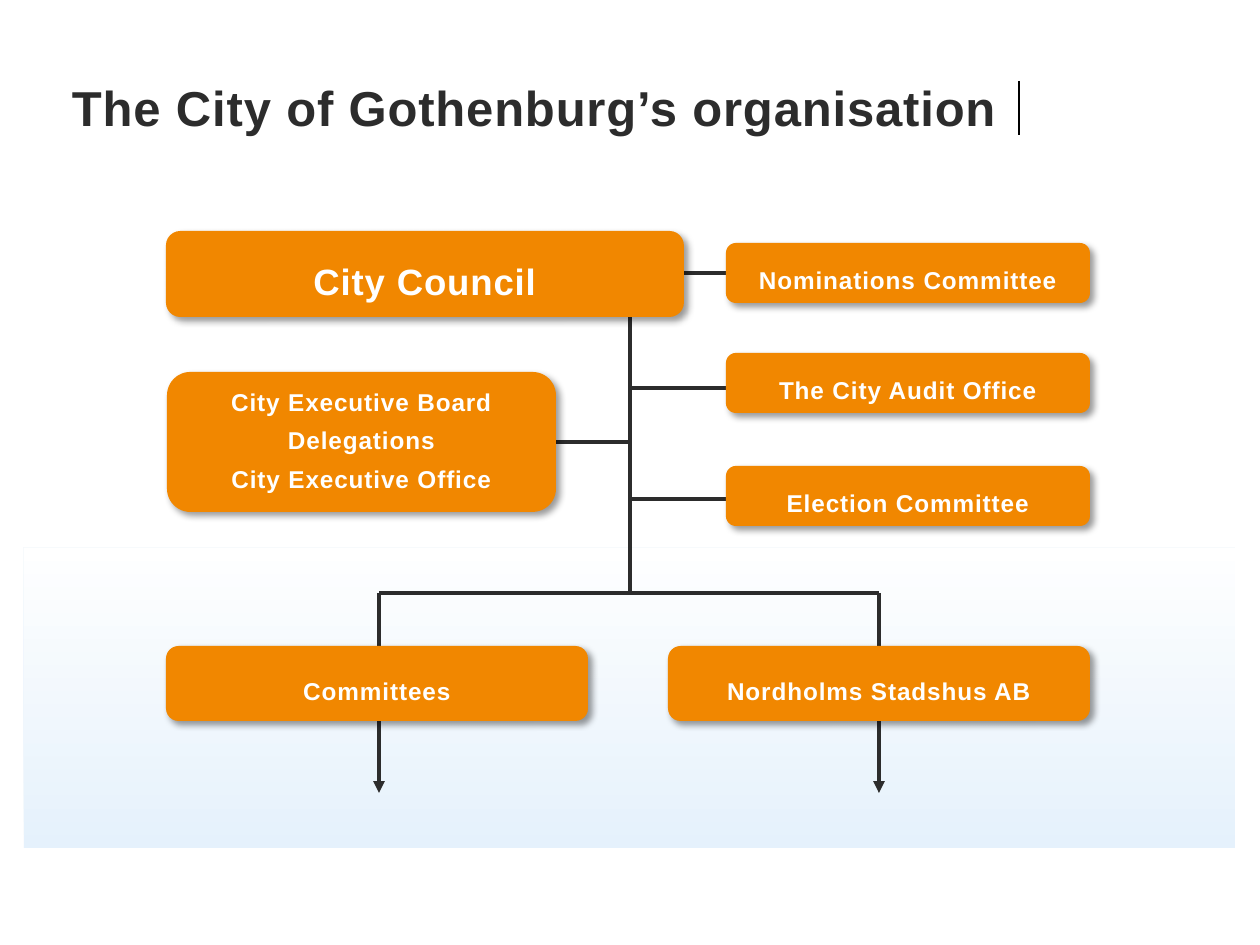
from lxml import etree
from pptx import Presentation
from pptx.dml.color import RGBColor
from pptx.enum.shapes import MSO_CONNECTOR, MSO_SHAPE
from pptx.enum.text import MSO_ANCHOR, PP_ALIGN
from pptx.oxml import parse_xml
from pptx.oxml.ns import nsdecls, qn
from pptx.util import Emu, Pt

STRAIGHT = MSO_CONNECTOR.STRAIGHT
RECT, ROUNDED = MSO_SHAPE.RECTANGLE, MSO_SHAPE.ROUNDED_RECTANGLE
MIDDLE, LEFT, CENTER = MSO_ANCHOR.MIDDLE, PP_ALIGN.LEFT, PP_ALIGN.CENTER
BLACK = RGBColor(0x00, 0x00, 0x00)
CHARCOAL = RGBColor(0x2C, 0x2C, 0x2C)
ORANGE = RGBColor(0xF1, 0x87, 0x00)
PALE_BLUE = RGBColor(0xD1, 0xE7, 0xFA)
WHITE = RGBColor(0xFF, 0xFF, 0xFF)
SCALE = 914400 / 126
SHADOW = (
    f'<a:effectLst {nsdecls("a")}>'
    '<a:outerShdw blurRad="50800" dist="38100" dir="2700000" algn="tl" rotWithShape="0">'
    '<a:srgbClr val="000000"><a:alpha val="40000"/></a:srgbClr>'
    '</a:outerShdw></a:effectLst>'
)


def px(n):
    return Emu(round(n * SCALE))


def add_line(s, x1, y1, x2, y2, color=CHARCOAL, width=2.25, arrow=False):
    c = s.shapes.add_connector(STRAIGHT, px(x1), px(y1), px(x2), px(y2))
    c.line.color.rgb = color
    c.line.width = Pt(width)
    if arrow:
        etree.SubElement(c.line._get_or_add_ln(), qn("a:tailEnd"), type="triangle")
    etree.SubElement(c._element.spPr, qn("a:effectLst"))


def set_text(sp, lines, size, color, align, insets, spacing=None, baseline=None):
    tf = sp.text_frame
    tf.word_wrap = True
    tf.vertical_anchor = MIDDLE
    for side, inset in zip(("left", "top", "right", "bottom"), insets):
        setattr(tf, f"margin_{side}", px(inset))
    font = {"name": "Arial", "size": Pt(size), "bold": True}
    for i, line in enumerate(lines):
        p = tf.paragraphs[0] if i == 0 else tf.add_paragraph()
        p.alignment = align
        if spacing:
            p.line_spacing = Pt(spacing)
        r = p.add_run()
        r.text = line
        for name, value in font.items():
            setattr(r.font, name, value)
        r.font.color.rgb = color
        rPr = r._r.get_or_add_rPr()
        rPr.set("spc", "50")
        if baseline:
            rPr.set("baseline", str(baseline))


def add_unit(s, x, y, w, h, *lines, size=24, insets=(0, 25, 0, 0), spacing=None):
    sp = s.shapes.add_shape(ROUNDED, px(x), px(y), px(w), px(h))
    sp.fill.solid()
    sp.fill.fore_color.rgb = ORANGE
    sp.line.fill.background()
    sp._element.spPr.append(parse_xml(SHADOW))
    set_text(sp, lines, size, WHITE, CENTER, insets, spacing, 30000)


def add_title(s, x, y, w, h):
    sp = s.shapes.add_textbox(px(x), px(y), px(w), px(h))
    set_text(sp, ["The City of Gothenburg’s organisation"], 28, CHARCOAL, LEFT,
             (0, 0, 0, 0), 27)
    add_line(s, x + w + 18, y + 15, x + w + 18, y + 69, BLACK, 1)


def add_band(s, x, y, w, h):
    sp = s.shapes.add_shape(RECT, px(x), px(y), px(w), px(h))
    sp.shadow.inherit = False
    sp.line.fill.background()
    sp.fill.gradient()
    sp.fill.gradient_angle = 90
    for stop, color in zip(sp.fill.gradient_stops, (PALE_BLUE, WHITE)):
        stop.color.rgb = color
    for clr in sp._element.spPr.iter(qn("a:srgbClr")):
        etree.SubElement(clr, qn("a:alpha"), val="55000")


def add_chart_tree(s, x, y, w, h):
    trunk, fork = x + 464, y + 362
    legs = (x + 213, x + 713)
    side_w, wide_w = 364, 422
    side_x = x + w - side_w
    for leg in legs:
        add_line(s, leg, fork, leg, y + h, arrow=True)
    add_line(s, x + 373, y + 211, trunk, y + 211)
    add_line(s, trunk, y + 79, trunk, fork)
    add_line(s, x + 518, y + 42, x + 678, y + 42)
    for dy in (157, 268):
        add_line(s, trunk, y + dy, x + 696, y + dy)
    add_line(s, legs[1], fork, legs[0], fork)

    add_unit(s, x, y, 518, 86, "City Council", size=36, insets=(0, 30, 0, 0))
    add_unit(s, x + 1, y + 141, 389, 140, "City Executive Board", "Delegations",
             "City Executive Office", insets=(13, 25, 13, 6), spacing=22)
    for dy, name in ((12, "Nominations Committee"), (122, "The City Audit Office"),
                     (235, "Election Committee")):
        add_unit(s, side_x, y + dy, side_w, 60, name)
    for left, name in ((x, "Committees"), (x + w - wide_w, "Nordholms Stadshus AB")):
        add_unit(s, left, y + 415, wide_w, 75, name)


def main():
    prs = Presentation()
    prs.slide_width, prs.slide_height = px(1260), px(945)
    s = prs.slides.add_slide(prs.slide_layouts[6])
    add_band(s, 24, 548, 1211, 300)
    add_title(s, 72, 66, 929, 93)
    add_chart_tree(s, 166, 231, 924, 562)
    prs.save("out.pptx")


if __name__ == "__main__":
    main()
